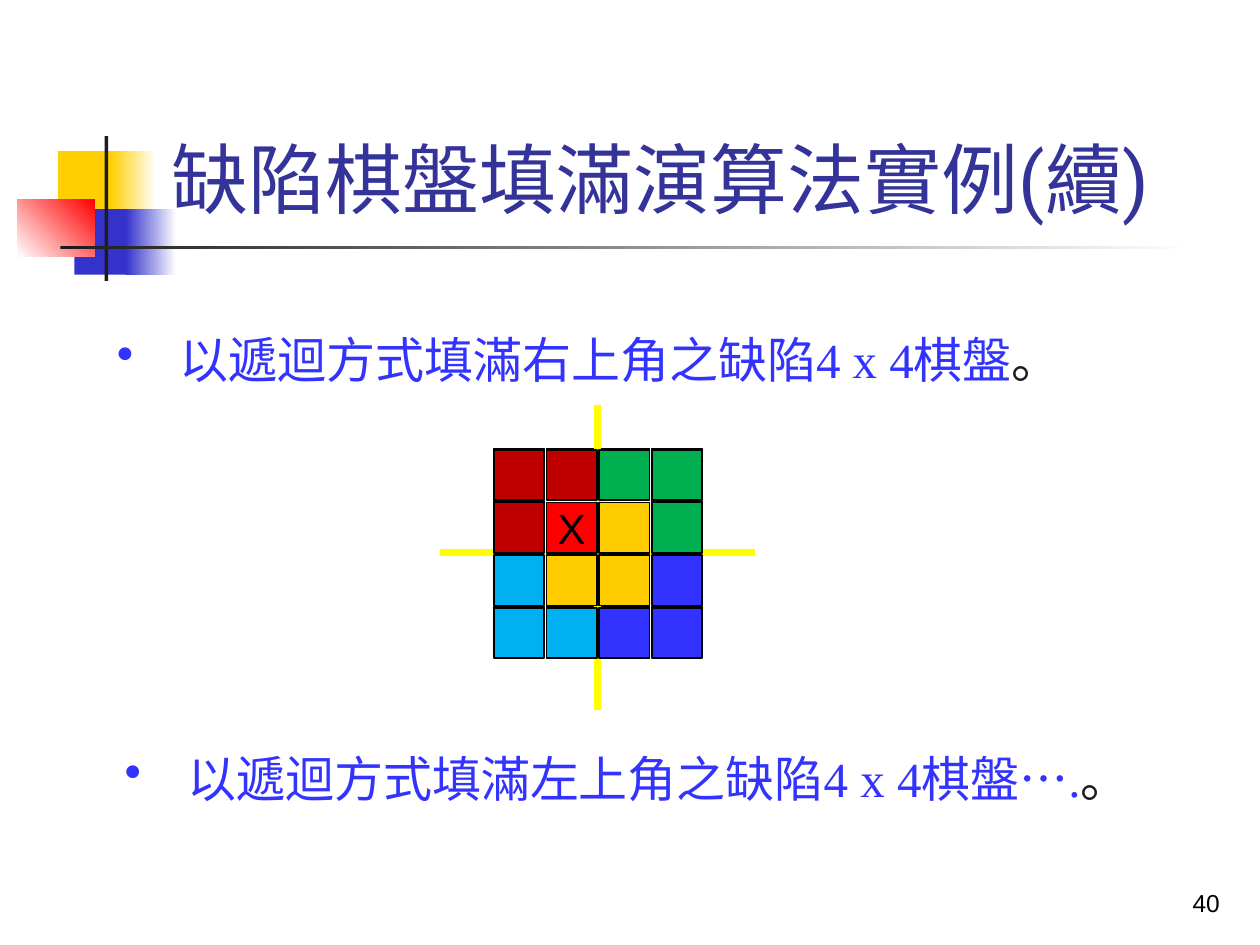
from lxml import etree
from pptx import Presentation
from pptx.dml.color import RGBColor
from pptx.enum.shapes import MSO_CONNECTOR, MSO_SHAPE
from pptx.enum.text import MSO_ANCHOR, PP_ALIGN
from pptx.oxml.ns import qn
from pptx.util import Inches, Pt

RECT = MSO_SHAPE.RECTANGLE
STRAIGHT = MSO_CONNECTOR.STRAIGHT
MIDDLE, BOTTOM = MSO_ANCHOR.MIDDLE, MSO_ANCHOR.BOTTOM
LEFT, CENTER, RIGHT = PP_ALIGN.LEFT, PP_ALIGN.CENTER, PP_ALIGN.RIGHT

BLACK, WHITE, DARK = "000000", "FFFFFF", "1C1C1C"
GOLD, NAVY, RED, BLUE = "FFCF01", "3333CC", "FF0000", "3333FF"
CELL_COLORS = {"R": "C00000", "G": "00B050", "Y": "FFCC00",
               "C": "00B0F0", "B": BLUE, "X": RED}
BOARD = ["RRGG",
         "RXYG",
         "CYYB",
         "CCBB"]
PITCH, CELL = 0.418, 0.4


def rgb(color):
    return RGBColor.from_string(color)


def add_rect(slide, x, y, w, h, fill, line=None, angle=0):
    """Add a rectangle; a pair of colours as fill makes a gradient."""
    s = slide.shapes.add_shape(RECT, Inches(x), Inches(y), Inches(w), Inches(h))
    s.shadow.inherit = False
    if isinstance(fill, tuple):
        s.fill.gradient()
        s.fill.gradient_angle = angle
        for stop, color in zip(s.fill.gradient_stops, fill):
            stop.color.rgb = rgb(color)
    else:
        s.fill.solid()
        s.fill.fore_color.rgb = rgb(fill)
    if line:
        s.line.color.rgb = rgb(line)
        s.line.width = Pt(1)
    else:
        s.line.fill.background()
    return s


def write(s, runs, size, font, align=LEFT, anchor=None, wrap=True):
    """Write (text, colour) runs into the first paragraph of a shape."""
    tf = s.text_frame
    tf.word_wrap = wrap
    if anchor is not None:
        tf.vertical_anchor = anchor
    p = tf.paragraphs[0]
    p.alignment = align
    p.font.size = Pt(size)
    p.font.name = font
    for text, color in runs:
        r = p.add_run()
        r.text = text
        r.font.color.rgb = rgb(color)
    return p


def add_text(slide, x, y, w, h, runs, size, font, **options):
    s = slide.shapes.add_textbox(Inches(x), Inches(y), Inches(w), Inches(h))
    return write(s, runs, size, font, **options)


def add_emblem(slide, x, y):
    """Coloured blocks with the crossed rules beside the title."""
    parts = [
        (0.32, 0.12, 0.48, 0.52, GOLD, 0),
        (0.74, 0.12, 0.36, 0.52, (GOLD, WHITE), 0),
        (0.45, 0.58, 0.46, 0.52, NAVY, 0),
        (0.86, 0.58, 0.4, 0.52, (NAVY, WHITE), 0),
        (0, 0.5, 0.61, 0.46, (WHITE, RED), 45),
        (0.69, 0, 0.03, 1.15, DARK, 0),
        (0.34, 0.87, 9, 0.03, (DARK, WHITE), 0),
    ]
    for dx, dy, w, h, fill, angle in parts:
        add_rect(slide, x + dx, y + dy, w, h, fill, angle=angle)


def add_axis(slide, x1, y1, x2, y2):
    s = slide.shapes.add_connector(
        STRAIGHT, Inches(x1), Inches(y1), Inches(x2), Inches(y2))
    s.line.color.rgb = rgb("FFFF00")
    s.line.width = Pt(4)
    etree.SubElement(s._element.spPr, qn("a:effectLst"))


def add_board(slide, x, y):
    """A 4 x 4 board: blank cells, dividing axes, then the filled cells."""
    cells = [(x + col * PITCH, y + row * PITCH, key)
             for row, keys in enumerate(BOARD) for col, key in enumerate(keys)]
    for cx, cy, key in cells:
        if key not in "XY":
            add_rect(slide, cx, cy, CELL, CELL, WHITE, BLACK)

    mid_x, mid_y = x + 2 * PITCH - 0.01, y + 2 * PITCH - 0.01
    add_axis(slide, mid_x, mid_y - 1.17, mid_x, mid_y + 1.25)
    add_axis(slide, mid_x - 1.25, mid_y, mid_x + 1.25, mid_y)

    for cx, cy, key in cells:
        s = add_rect(slide, cx, cy + 0.01, CELL, CELL, CELL_COLORS[key], BLACK)
        if key == "X":
            write(s, [("X", BLACK)], 24, "Arial", align=CENTER,
                  anchor=MIDDLE, wrap=False)


def add_bullet(slide, x, y, text):
    p = add_text(slide, x, y, 8.92, 0.57, [(text, BLUE), ("。", DARK)],
                 28, "Times New Roman")
    pPr = p._p.get_or_add_pPr()
    pPr.set("marL", str(Inches(0.5)))
    pPr.set("indent", str(-Inches(0.5)))
    bullet = etree.Element(qn("a:buChar"), char="•")
    pPr.insert(0, bullet)


def main():
    prs = Presentation()
    prs.slide_width, prs.slide_height = Inches(10), Inches(7.5)
    slide = prs.slides.add_slide(prs.slide_layouts[6])

    add_emblem(slide, 0.14, 1.08)
    add_text(slide, 1.26, 0.23, 8.15, 1.6,
             [("缺陷棋盤填滿演算法實例(續)", "333399")],
             44, "Roboto", anchor=BOTTOM)
    add_board(slide, 3.92, 3.56)
    add_bullet(slide, 0.83, 2.57, "以遞迴方式填滿右上角之缺陷4 x 4棋盤")
    add_bullet(slide, 0.89, 5.89, "以遞迴方式填滿左上角之缺陷4 x 4棋盤….")
    # Slide number
    add_text(slide, 7.7, 6.83, 2.08, 0.5, [("40", BLACK)],
             14, "Arial", align=RIGHT, anchor=BOTTOM)

    prs.save("out.pptx")


if __name__ == "__main__":
    main()
